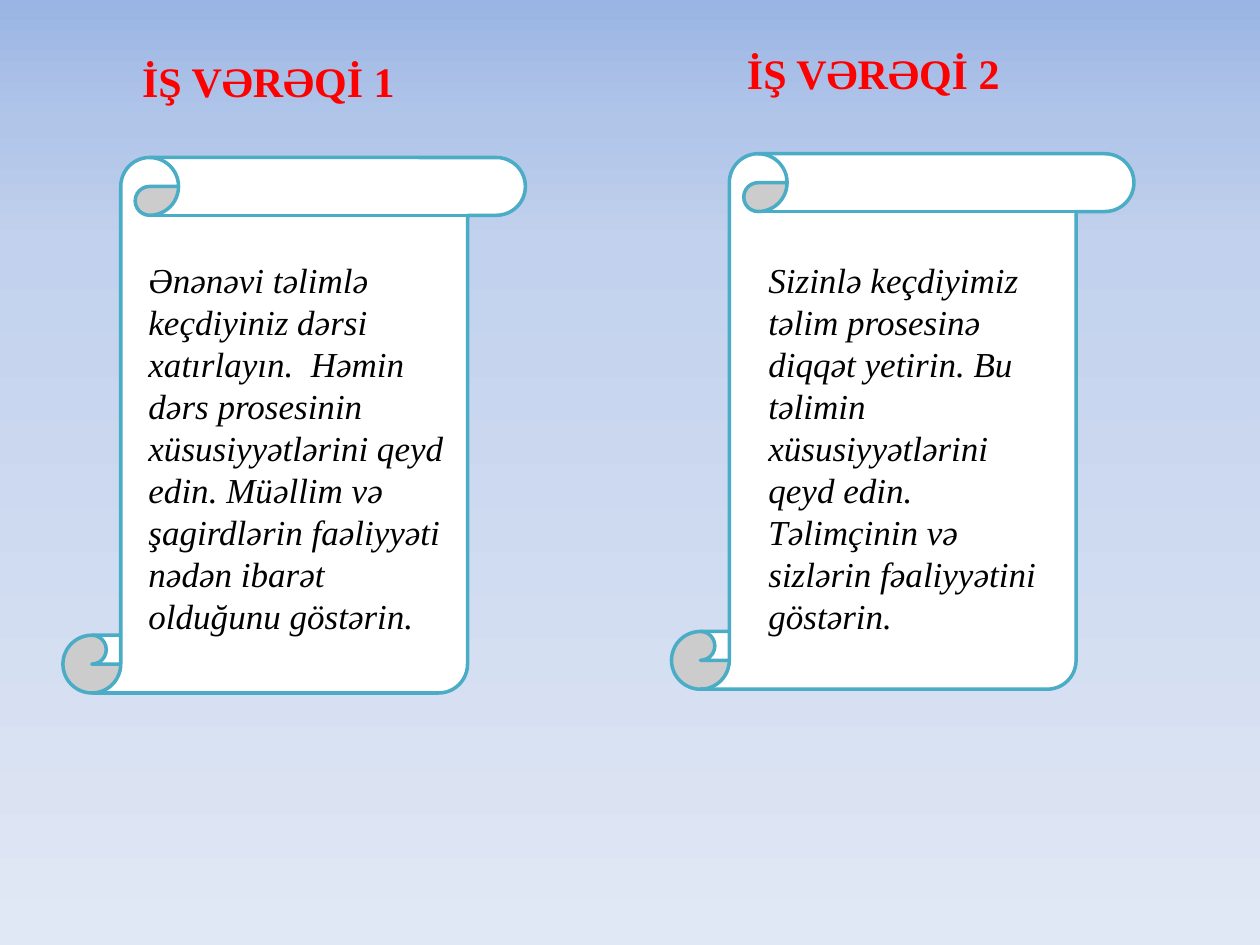
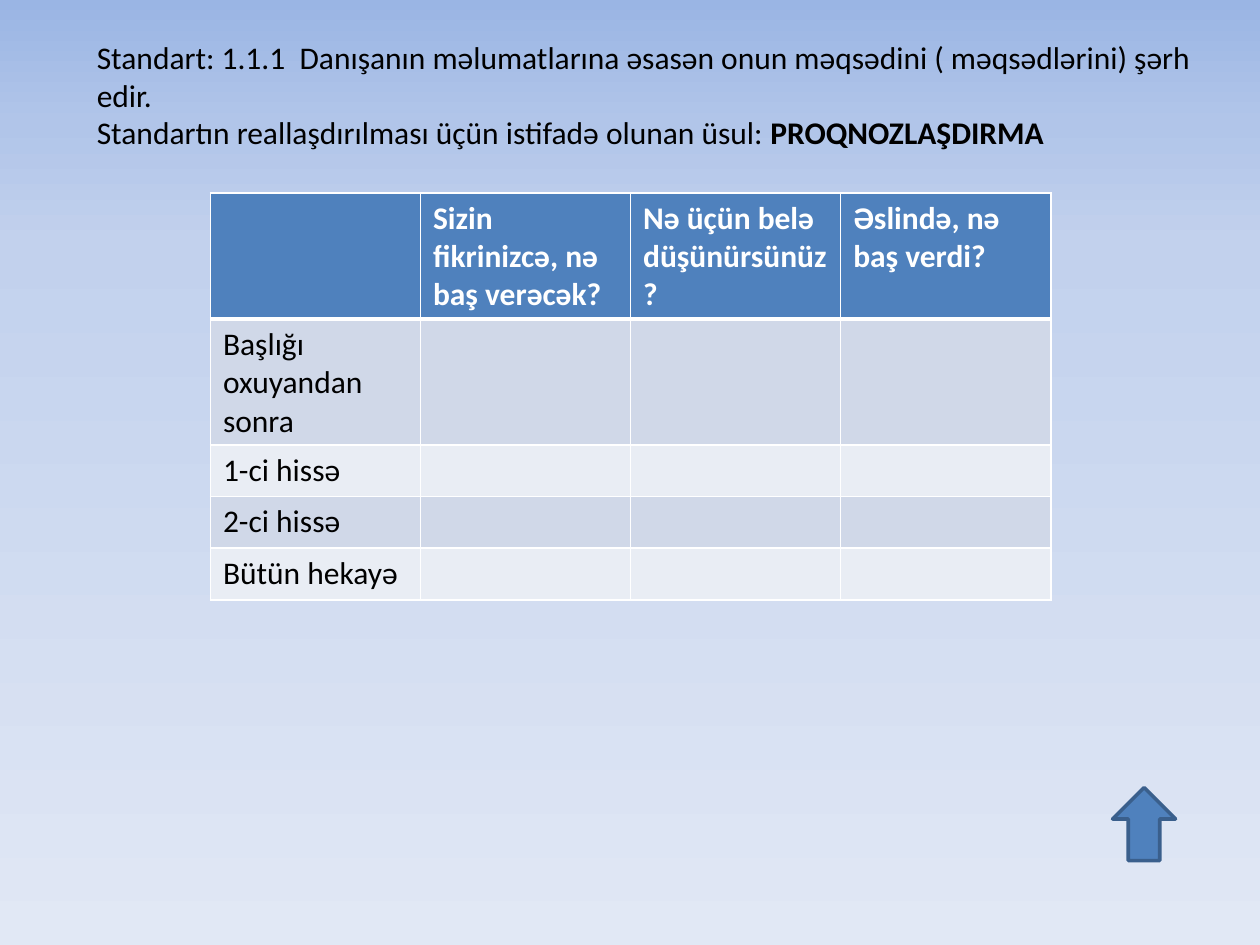
from dataclasses import dataclass

import pptx
import pptx.dml.color
import pptx.enum.shapes
import pptx.enum.text
import pptx.oxml
import pptx.oxml.ns
import pptx.util
from pptx.dml.color import RGBColor
from pptx.util import Inches

RED = RGBColor(0xFF, 0x00, 0x00)
BLACK = RGBColor(0x00, 0x00, 0x00)
WHITE = RGBColor(0xFF, 0xFF, 0xFF)
TEAL = RGBColor(0x4B, 0xAC, 0xC6)
BLUE = RGBColor(0x4F, 0x81, 0xBD)
NAVY = RGBColor(0x3A, 0x5F, 0x8C)
BANDS = (RGBColor(0xD0, 0xD8, 0xE8), RGBColor(0xE9, 0xED, 0xF4))
SKY = (
    (0, RGBColor(0x9A, 0xB5, 0xE4)),
    (13, RGBColor(0xB1, 0xC5, 0xE9)),
    (26, RGBColor(0xC2, 0xD1, 0xED)),
    (100, RGBColor(0xE1, 0xE8, 0xF5)),
)
SERIF = "Times New Roman"
SANS = "Calibri"
KINDS = pptx.enum.shapes.MSO_SHAPE


@dataclass(frozen=True)
class Box:
    left: float
    top: float
    width: float
    height: float

    def place(self) -> tuple:
        return tuple(Inches(n) for n in (self.left, self.top, self.width, self.height))


@dataclass(frozen=True)
class Style:
    size: int
    font: str
    color: RGBColor
    bold: bool = False
    slant: bool = False


@dataclass(frozen=True)
class Sheet:
    title: str
    head: Box
    scroll: Box
    text: str
    body: Box


HEAD = Style(24, SERIF, RED, bold=True)
TASK = Style(20, SERIF, BLACK, slant=True)
PLAIN = Style(18, SANS, BLACK)
STRONG = Style(18, SANS, BLACK, bold=True)
TOP = Style(18, SANS, WHITE, bold=True)

SHEETS = (
    Sheet(
        "İŞ VƏRƏQİ 1",
        Box(1.03, 0.39, 3, 0.5),
        Box(0.5, 1.25, 3.67, 4.25),
        "Ənənəvi təlimlə keçdiyiniz dərsi xatırlayın.  Həmin dərs prosesinin "
        "xüsusiyyətlərini qeyd edin. Müəllim və şagirdlərin faəliyyəti nədən "
        "ibarət olduğunu göstərin.",
        Box(1.08, 2, 2.58, 3.13),
    ),
    Sheet(
        "İŞ VƏRƏQİ 2",
        Box(5.83, 0.33, 3, 0.5),
        Box(5.33, 1.22, 3.67, 4.25),
        "Sizinlə keçdiyimiz təlim prosesinə diqqət yetirin. Bu təlimin "
        "xüsusiyyətlərini qeyd edin. Təlimçinin və sizlərin fəaliyyətini göstərin.",
        Box(6, 2, 2.42, 3.13),
    ),
)
INTRO = (
    "Standart: 1.1.1  Danışanın məlumatlarına əsasən onun məqsədini "
    "( məqsədlərini) şərh edir.\n"
    "Standartın reallaşdırılması üçün istifadə olunan üsul: "
)
METHOD = "PROQNOZLAŞDIRMA"
ASKS = ("", "Sizin fikrinizcə, nə baş verəcək?", "Nə üçün belə düşünürsünüz?",
        "Əslində, nə baş verdi?")
STEPS = ("Başlığı oxuyandan sonra", "1-ci hissə", "2-ci hissə", "Bütün hekayə")


def dress(run, style: Style) -> None:
    font = run.font
    font.size = pptx.util.Pt(style.size)
    font.name = style.font
    font.color.rgb = style.color
    font.bold = style.bold
    font.italic = style.slant


def write(frame, text: str, style: Style) -> None:
    frame.text = text
    for para in frame.paragraphs:
        for run in para.runs:
            dress(run, style)


def add_slide(deck):
    slide = deck.slides.add_slide(deck.slide_layouts[6])
    fill = slide.background.fill
    fill.gradient()
    fill.gradient_angle = 270
    stops = next(slide.element.iter(pptx.oxml.ns.qn("a:gsLst")))
    for stop in list(stops):
        stops.remove(stop)
    for spot, color in SKY:
        stops.append(pptx.oxml.parse_xml(
            f'<a:gs {pptx.oxml.ns.nsdecls("a")} pos="{spot * 1000}">'
            f'<a:srgbClr val="{color}"/></a:gs>'))
    return slide


def add_text(slide, box: Box, text: str, style: Style):
    frame = slide.shapes.add_textbox(*box.place()).text_frame
    frame.word_wrap = True
    frame.auto_size = pptx.enum.text.MSO_AUTO_SIZE.SHAPE_TO_FIT_TEXT
    write(frame, text, style)
    return frame


def add_form(slide, kind, box: Box, fill: RGBColor, line: RGBColor) -> None:
    form = slide.shapes.add_shape(kind, *box.place())
    form.shadow.inherit = False
    form.fill.solid()
    form.fill.fore_color.rgb = fill
    form.line.color.rgb = line
    form.line.width = pptx.util.Pt(2)


def edge_cell(cell, base: int) -> None:
    props = cell._tc.get_or_add_tcPr()
    widths = {"lnL": 1, "lnR": 1, "lnT": 1, "lnB": base}
    for spot, (tag, width) in enumerate(widths.items()):
        props.insert(spot, pptx.oxml.parse_xml(
            f'<a:{tag} {pptx.oxml.ns.nsdecls("a")} w="{pptx.util.Pt(width)}">'
            f'<a:solidFill><a:srgbClr val="{WHITE}"/></a:solidFill></a:{tag}>'))


def add_grid(slide, box: Box) -> None:
    rows = [ASKS] + [(step, "", "", "") for step in STEPS]
    frame = slide.shapes.add_table(len(rows), len(ASKS), *box.place())
    table = frame.table
    for row in table.rows:
        row.height = Inches(0.41)
    frame.height = Inches(box.height)
    for i, row in enumerate(rows):
        for j, text in enumerate(row):
            cell = table.cell(i, j)
            cell.fill.solid()
            cell.fill.fore_color.rgb = BANDS[(i - 1) % 2] if i else BLUE
            edge_cell(cell, 1 if i else 3)
            if text:
                write(cell.text_frame, text, PLAIN if i else TOP)


def draw_tasks(deck) -> None:
    slide = add_slide(deck)
    for sheet in SHEETS:
        add_text(slide, sheet.head, sheet.title, HEAD)
        add_form(slide, KINDS.VERTICAL_SCROLL, sheet.scroll, WHITE, TEAL)
        add_text(slide, sheet.body, sheet.text, TASK)


def draw_guess(deck) -> None:
    slide = add_slide(deck)
    frame = add_text(slide, Box(0.67, 0.25, 9.17, 1.01), INTRO, PLAIN)
    run = frame.paragraphs[-1].add_run()
    run.text = METHOD
    dress(run, STRONG)
    add_grid(slide, Box(1.67, 1.53, 6.67, 3.22))
    add_form(slide, KINDS.UP_ARROW, Box(8.83, 6.25, 0.5, 0.58), BLUE, NAVY)


def main() -> None:
    deck = pptx.Presentation()
    deck.slide_width = Inches(10)
    deck.slide_height = Inches(7.5)
    draw_tasks(deck)
    draw_guess(deck)
    deck.save("out.pptx")


if __name__ == "__main__":
    main()
